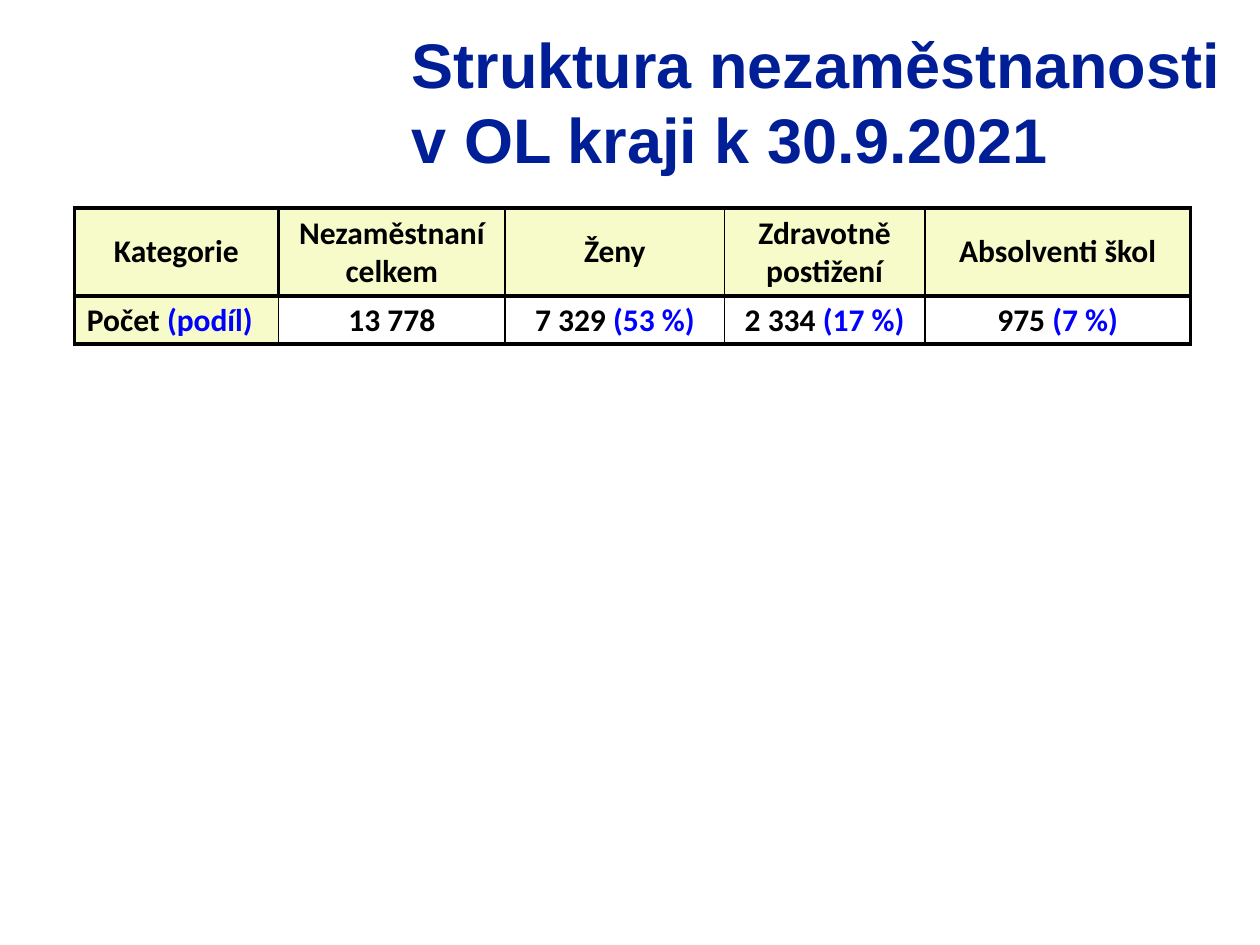
from lxml import etree
from pptx import Presentation
from pptx.dml.color import RGBColor
from pptx.enum.text import MSO_ANCHOR, PP_ALIGN
from pptx.oxml.ns import qn
from pptx.util import Inches, Pt

NAVY = RGBColor(0x00, 0x1E, 0x96)
BLACK = RGBColor(0x00, 0x00, 0x00)
BLUE = RGBColor(0x00, 0x00, 0xFF)
CREAM = RGBColor(0xF7, 0xFB, 0xC9)
TOP, MIDDLE, BOTTOM = MSO_ANCHOR.TOP, MSO_ANCHOR.MIDDLE, MSO_ANCHOR.BOTTOM
LEFT, CENTER = PP_ALIGN.LEFT, PP_ALIGN.CENTER

COLUMN_WIDTHS = [1.62, 1.8, 1.74, 1.59, 2.11]
ROW_HEIGHTS = [0.7, 0.38]
ROWS = [
    [("Kategorie", ""), ("Nezaměstnaní celkem", ""), ("Ženy", ""),
     ("Zdravotně postižení", ""), ("Absolventi škol", "")],
    [("Počet ", "(podíl)"), ("13 778", ""), ("7 329 ", "(53 %)"),
     ("2 334 ", "(17 %)"), ("975 ", "(7 %)")],
]


def set_borders(cell, widths):
    properties = cell._tc.get_or_add_tcPr()
    for position, (side, width) in enumerate(zip(("lnL", "lnR", "lnT", "lnB"), widths)):
        line = etree.Element(qn(f"a:{side}"), w=str(Pt(width)))
        fill = etree.SubElement(line, qn("a:solidFill"))
        etree.SubElement(fill, qn("a:srgbClr"), val=str(BLACK))
        properties.insert(position, line)


presentation = Presentation()
presentation.slide_width = Inches(10)
presentation.slide_height = Inches(7.5)
slide = presentation.slides.add_slide(presentation.slide_layouts[6])

title = slide.shapes.add_textbox(Inches(3.17), Inches(0.15), Inches(6.83), Inches(1.5))
title.text_frame.word_wrap = True
title.text_frame.vertical_anchor = TOP
paragraph = title.text_frame.paragraphs[0]
paragraph.text = "Struktura nezaměstnanosti v OL kraji k 30.9.2021"
paragraph.font.name = "Arial"
paragraph.font.size = Pt(36)
paragraph.font.bold = True
paragraph.font.color.rgb = NAVY

table = slide.shapes.add_table(
    len(ROWS), len(COLUMN_WIDTHS), Inches(0.59), Inches(1.65),
    Inches(sum(COLUMN_WIDTHS)), Inches(sum(ROW_HEIGHTS))).table
table.first_row = False
table.horz_banding = False
for column, width in zip(table.columns, COLUMN_WIDTHS):
    column.width = Inches(width)
for row, height in zip(table.rows, ROW_HEIGHTS):
    row.height = Inches(height)

last_column = len(COLUMN_WIDTHS) - 1
for row_index, row in enumerate(ROWS):
    is_header = row_index == 0
    for column_index, (label, share) in enumerate(row):
        cell = table.cell(row_index, column_index)
        cell.vertical_anchor = MIDDLE if is_header else BOTTOM
        if is_header or column_index == 0:
            cell.fill.solid()
            cell.fill.fore_color.rgb = CREAM
        else:
            cell.fill.background()

        paragraph = cell.text_frame.paragraphs[0]
        paragraph.alignment = CENTER if is_header or column_index else LEFT
        if not is_header:
            paragraph.line_spacing = 0.75
        paragraph.font.name = "Calibri"
        paragraph.font.size = Pt(18)
        paragraph.font.bold = True
        paragraph.font.color.rgb = BLACK
        paragraph.add_run().text = label
        if share:
            run = paragraph.add_run()
            run.text = share
            run.font.color.rgb = BLUE

        first_divider = 1.5 if is_header else 1
        left = {0: 2.25, 1: first_divider}.get(column_index, 1)
        right = {0: first_divider, last_column: 2.25}.get(column_index, 1)
        set_borders(cell, (left, right, 2.25, 2.25))

presentation.save("out.pptx")
